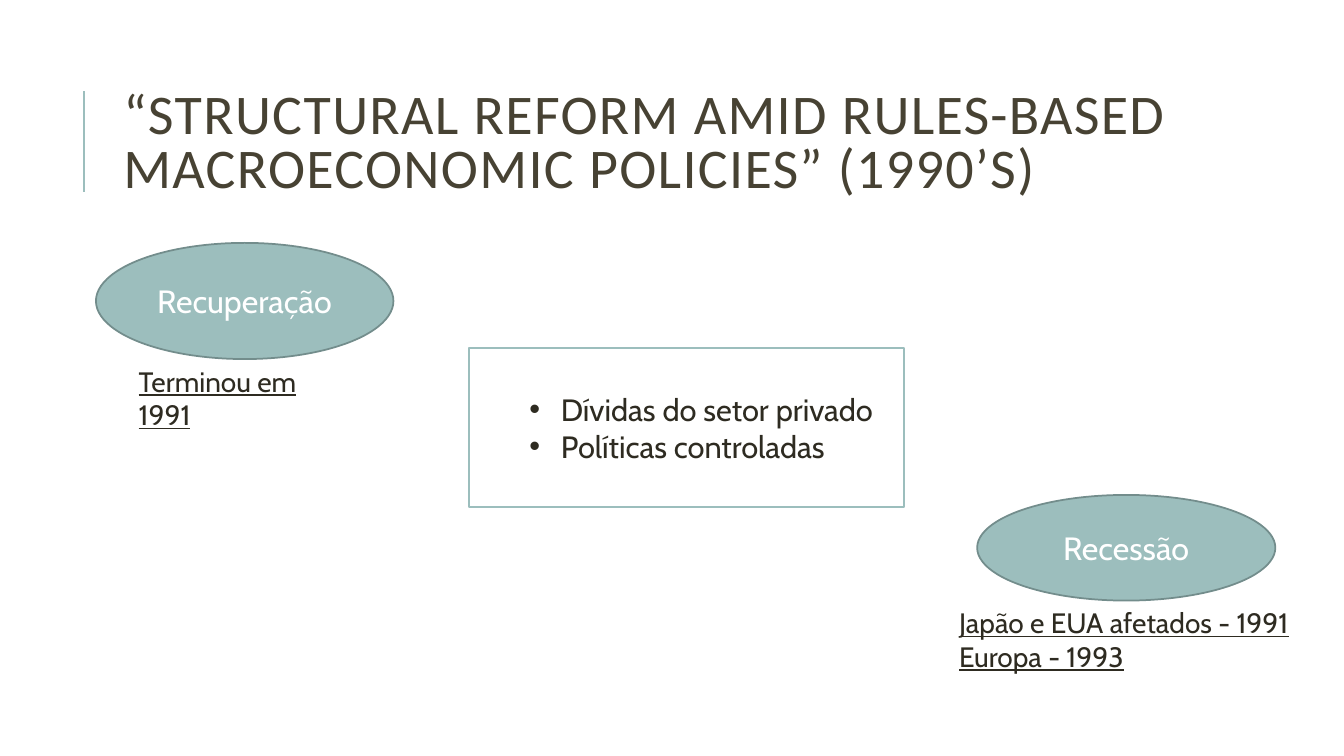
from dataclasses import dataclass

from lxml import etree
from pptx import Presentation
from pptx.dml.color import RGBColor
from pptx.enum.shapes import MSO_CONNECTOR, MSO_SHAPE
from pptx.enum.text import MSO_ANCHOR, PP_ALIGN
from pptx.oxml.ns import qn
from pptx.util import Pt

STRAIGHT = MSO_CONNECTOR.STRAIGHT
OVAL = MSO_SHAPE.OVAL
RECTANGLE = MSO_SHAPE.RECTANGLE
TOP = MSO_ANCHOR.TOP
MIDDLE = MSO_ANCHOR.MIDDLE
LEFT = PP_ALIGN.LEFT
CENTER = PP_ALIGN.CENTER


@dataclass(frozen=True)
class Theme:
    accent: RGBColor = RGBColor(0x9C, 0xBE, 0xBD)
    outline: RGBColor = RGBColor(0x73, 0x8D, 0x8C)
    white: RGBColor = RGBColor(0xFF, 0xFF, 0xFF)
    ink: RGBColor = RGBColor(0x2E, 0x2B, 0x21)
    heading: RGBColor = RGBColor(0x47, 0x42, 0x33)
    heading_font: str = "Calibri"
    body_font: str = "Cabin"
    heading_size: float = 40
    phase_size: float = 23
    cause_size: float = 22
    note_size: float = 20
    outline_width: float = 1.25
    rule_width: float = 1.5


THEME = Theme()


@dataclass(frozen=True)
class Box:
    left: float
    top: float
    width: float
    height: float

    def points(self):
        return Pt(self.left), Pt(self.top), Pt(self.width), Pt(self.height)


def write(frame, lines, size, color, font=THEME.body_font, anchor=TOP,
          align=LEFT, underline=False):
    frame.word_wrap = True
    frame.vertical_anchor = anchor
    font_format = {"size": Pt(size), "name": font, "underline": underline}
    for index, line in enumerate(lines):
        paragraph = frame.add_paragraph() if index else frame.paragraphs[0]
        paragraph.alignment = align
        run = paragraph.add_run()
        run.text = line
        for attribute, value in font_format.items():
            setattr(run.font, attribute, value)
        run.font.color.rgb = color


def add_panel(slide, preset, box, fill, outline):
    panel = slide.shapes.add_shape(preset, *box.points())
    panel.shadow.inherit = False
    panel.fill.solid()
    panel.fill.fore_color.rgb = fill
    panel.line.color.rgb = outline
    panel.line.width = Pt(THEME.outline_width)
    return panel.text_frame


def add_heading(slide, box, text):
    rule_top, rule_bottom = Pt(box.top), Pt(box.top + 72)
    rule = slide.shapes.add_connector(
        STRAIGHT, Pt(box.left), rule_bottom, Pt(box.left), rule_top)
    rule.line.color.rgb = THEME.accent
    rule.line.width = Pt(THEME.rule_width)
    etree.SubElement(rule._element.spPr, qn("a:effectLst"))

    indent = 21
    title_box = Box(box.left + indent, box.top, box.width - indent, box.height)
    title = slide.shapes.add_textbox(*title_box.points()).text_frame
    write(title, [text], THEME.heading_size, THEME.heading,
          THEME.heading_font, MIDDLE)
    paragraph = title.paragraphs[0]
    paragraph.line_spacing = 0.8
    paragraph.runs[0].font._element.set("spc", "100")


def add_phase(slide, box, name, notes, note_offset, note_width):
    oval = add_panel(slide, OVAL, box, THEME.accent, THEME.outline)
    write(oval, [name], THEME.phase_size, THEME.white, anchor=MIDDLE,
          align=CENTER)
    note_box = Box(box.left + note_offset, box.top + box.height, note_width, 55)
    note = slide.shapes.add_textbox(*note_box.points()).text_frame
    write(note, notes, THEME.note_size, THEME.ink, underline=True)


def add_causes(slide, box, causes):
    frame = add_panel(slide, RECTANGLE, box, THEME.white, THEME.accent)
    write(frame, causes, THEME.cause_size, THEME.ink, anchor=MIDDLE)
    for paragraph in frame.paragraphs:
        properties = paragraph._p.get_or_add_pPr()
        properties.set("marL", str(Pt(58.5)))
        properties.set("indent", str(-Pt(22.5)))
        etree.SubElement(properties, qn("a:buFont"), typeface="Arial")
        etree.SubElement(properties, qn("a:buChar"), char="•")


def main():
    deck = Presentation()
    deck.slide_width, deck.slide_height = Pt(960), Pt(540)
    slide = deck.slides.add_slide(deck.slide_layouts[6])
    add_heading(
        slide, Box(60, 65, 799, 78),
        "“STRUCTURAL REFORM AMID RULES-BASED MACROECONOMIC POLICIES” (1990’S)")
    add_phase(slide, Box(68.5, 173.5, 212.5, 83), "Recuperação",
              ["Terminou em 1991"], 23.5, 164)
    add_causes(slide, Box(335, 248.5, 311, 113.5),
               ["Dívidas do setor privado", "Políticas controladas"])
    add_phase(slide, Box(698, 353.5, 213, 75.5), "Recessão",
              ["Japão e EUA afetados - 1991", "Europa - 1993"], -20, 265)
    deck.save("out.pptx")


if __name__ == "__main__":
    main()
